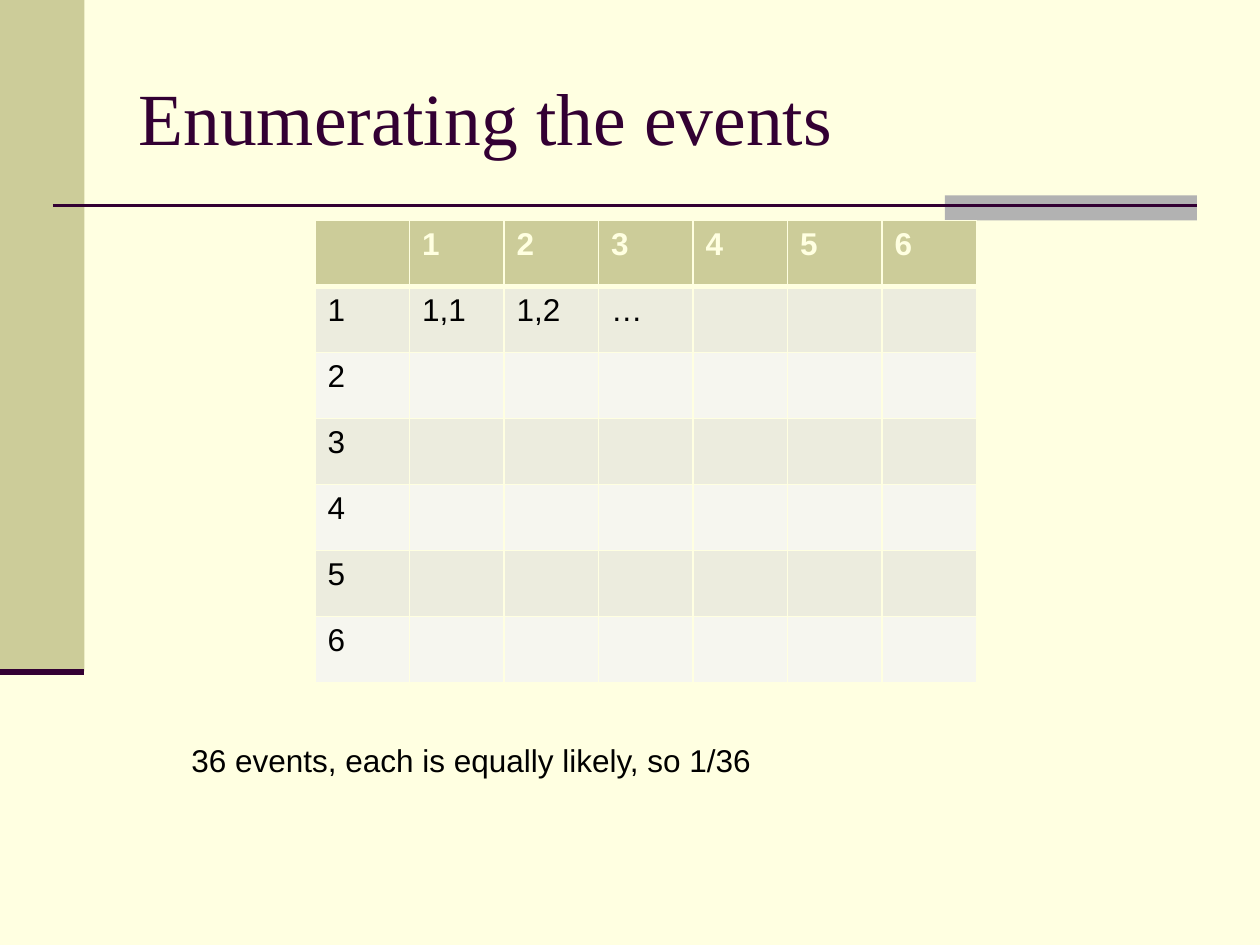
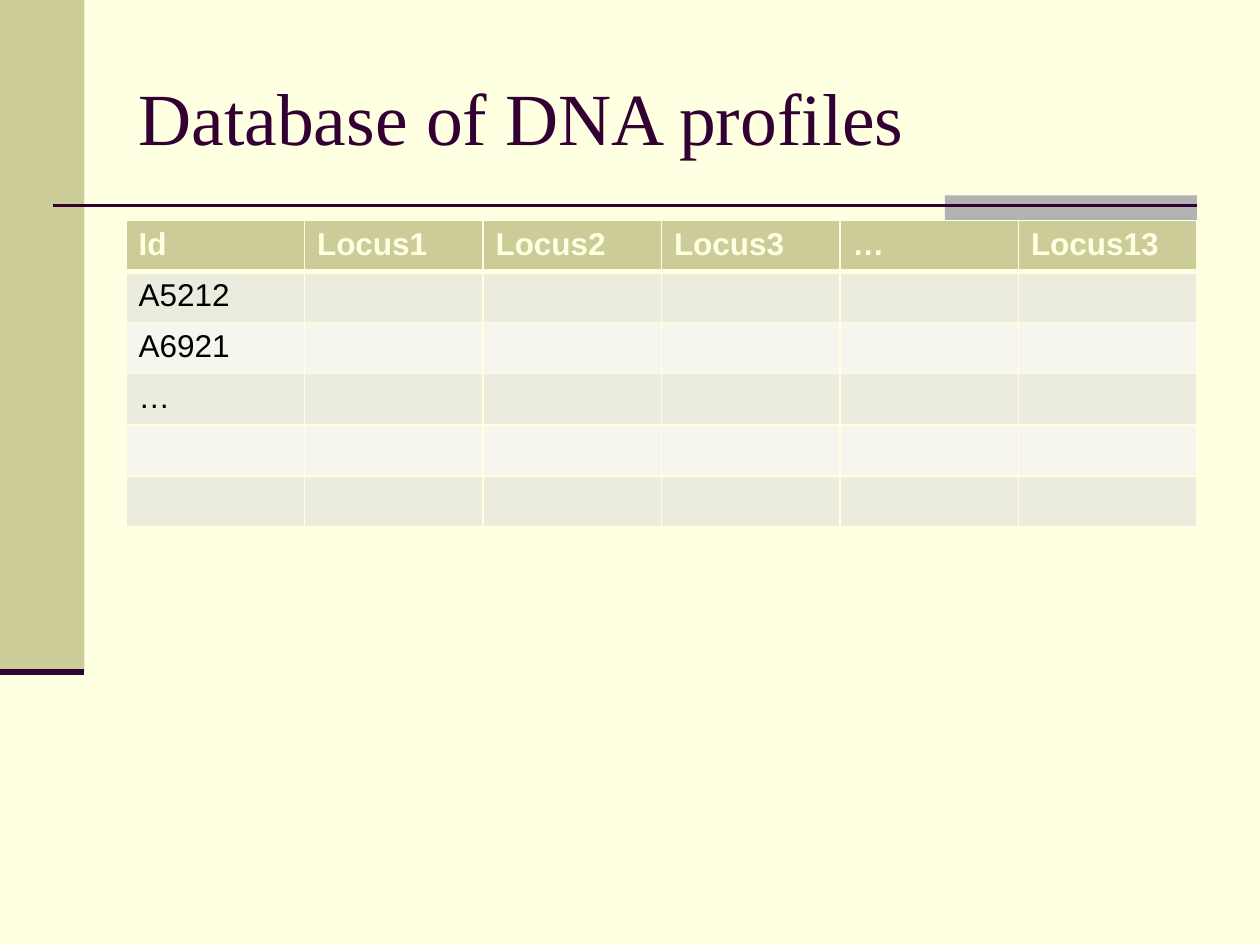
from lxml.etree import SubElement
from pptx import Presentation
from pptx.dml.color import RGBColor
from pptx.enum.shapes import MSO_CONNECTOR as Connector, MSO_SHAPE as Shape
from pptx.enum.text import MSO_ANCHOR as Anchor, MSO_AUTO_SIZE as AutoSize, PP_ALIGN as Align
from pptx.oxml import parse_xml
from pptx.oxml.ns import nsdecls, qn
from pptx.util import Inches, Pt

# Shared style
CREAM, OLIVE, GREY, PLUM, BLACK = "FFFFE1", "CCCC99", "B2B2B2", "330033", "000000"
ROW_FILLS = ("ECECDE", "F6F6EF")
TITLE = {"name": "Times New Roman", "size": Pt(42), "bold": False, "color": PLUM}
BODY = {"name": "Arial", "size": Pt(18), "bold": False, "color": BLACK}
HEADER = {**BODY, "bold": True, "color": CREAM}


def rgb(value):
    return RGBColor.from_string(value)


def inches(*values):
    return [Inches(value) for value in values]


class SlideBuilder:
    def __init__(self):
        self.deck = Presentation()
        self.deck.slide_width, self.deck.slide_height = inches(10, 7.5)
        background = self.deck.slide_master.background.fill
        background.solid()
        background.fore_color.rgb = rgb(CREAM)
        self.page = None

    def new_page(self, title):
        self.page = self.deck.slides.add_slide(self.deck.slide_layouts[5])
        # Side band and title rule
        self.rectangle(0, 0, 0.67, 5.33, OLIVE)
        self.rectangle(7.5, 1.55, 2, 0.2, GREY)
        self.line(0.42, 1.63, 9.5, 1.63, PLUM, 1.5)
        self.line(0, 5.33, 0.67, 5.33, PLUM, 3.5)
        # Title
        box = self.page.shapes.title
        box.left, box.top, box.width, box.height = inches(1, 0.3, 8.5, 1.25)
        box.text_frame.auto_size = AutoSize.NONE
        box.text_frame.vertical_anchor = Anchor.MIDDLE
        self.add_words(box.text_frame, title, TITLE)

    def add_words(self, frame, text, style):
        para = frame.paragraphs[0]
        para.alignment = Align.LEFT
        span = para.add_run()
        span.text = text
        for name, value in style.items():
            if name == "color":
                span.font.color.rgb = rgb(value)
            else:
                setattr(span.font, name, value)

    def rectangle(self, left, top, width, height, fill):
        shape = self.page.shapes.add_shape(Shape.RECTANGLE, *inches(left, top, width, height))
        shape.shadow.inherit = False
        shape.fill.solid()
        shape.fill.fore_color.rgb = rgb(fill)
        shape.line.fill.background()

    def line(self, x1, y1, x2, y2, color, width):
        line = self.page.shapes.add_connector(Connector.STRAIGHT, *inches(x1, y1, x2, y2))
        line.line.color.rgb = rgb(color)
        line.line.width = Pt(width)
        SubElement(line._element.spPr, qn("a:effectLst"))

    def text(self, left, top, width, height, text):
        box = self.page.shapes.add_textbox(*inches(left, top, width, height))
        box.text_frame.word_wrap = False
        box.text_frame.auto_size = AutoSize.SHAPE_TO_FIT_TEXT
        self.add_words(box.text_frame, text, BODY)

    def table(self, left, top, width, height, rows):
        table = self.page.shapes.add_table(
            len(rows), len(rows[0]), *inches(left, top, width, height)).table
        for r, row in enumerate(rows):
            for c, text in enumerate(row):
                cell = table.cell(r, c)
                cell.fill.solid()
                cell.fill.fore_color.rgb = rgb(ROW_FILLS[(r - 1) % 2] if r else OLIVE)
                self.borders(cell, top=3 if r == 1 else 1, bottom=1 if r else 3)
                if text:
                    self.add_words(cell.text_frame, text, BODY if r else HEADER)

    def borders(self, cell, top, bottom):
        properties = cell._tc.get_or_add_tcPr()
        for position, (side, width) in enumerate(zip("LRTB", (1, 1, top, bottom))):
            properties.insert(position, parse_xml(
                f'<a:ln{side} {nsdecls("a")} w="{Pt(width)}"><a:solidFill>'
                f'<a:srgbClr val="{CREAM}"/></a:solidFill></a:ln{side}>'))


def padded(cells, columns):
    return cells + [""] * (columns - len(cells))


def main():
    builder = SlideBuilder()

    # Outcomes of two dice
    faces = [str(face) for face in range(1, 7)]
    outcomes = {"1": ["1,1", "1,2", "…"]}
    builder.new_page("Enumerating the events")
    builder.table(2.5, 1.75, 5.25, 3.67, [["", *faces]] + [
        padded([face, *outcomes.get(face, [])], 7) for face in faces])
    builder.text(1.42, 5.83, 4.69, 0.4, "36 events, each is equally likely, so 1/36")

    # Profile database
    loci = ["Id", "Locus1", "Locus2", "Locus3", "…", "Locus13"]
    builder.new_page("Database of DNA profiles")
    builder.table(1, 1.75, 8.5, 2.43, [loci] + [
        padded([profile], len(loci)) for profile in ("A5212", "A6921", "…", "", "")])

    builder.deck.save("out.pptx")


if __name__ == "__main__":
    main()
